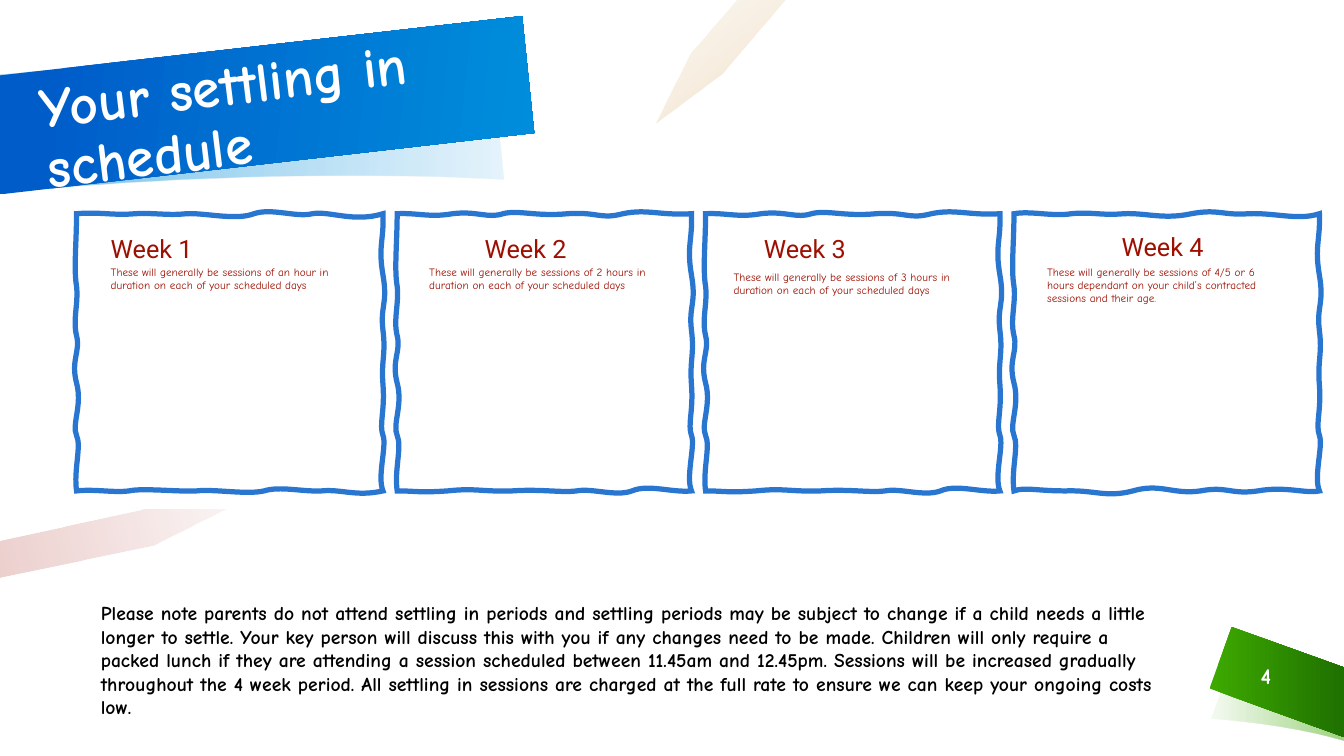
import pptx
import pptx.dml.color
import pptx.enum.text
import pptx.oxml
import pptx.oxml.ns
import pptx.util

PX = 9144  # one hundredth of an inch in EMU
COLORS = {
    "blue": "005CC9", "sky": "008EDC", "green": "3DA800", "dark_green": "1F7100",
    "ochre": "C07400", "red": "9D0F00", "white": "FFFFFF", "black": "000000",
}
FRAME_TOP = 212
FRAME_HEIGHT = 275

# Decorations: points are (x, y), curves are (control 1, control 2, end).
# Gradient stops are (percent, color, opacity).
DECORATIONS = [
    ([(1202, 713), (1202, 713, 1278, 718, 1333, 735), (1333, 668),
      (1272, 651, 1224, 652, 1224, 652)],
     [(3, "green", 6), (100, "green", 50)], 0),
    ([(1333, 662), (1222, 622), (1200, 683), (1333, 731)],
     [(3, "green", 100), (100, "dark_green", 100)], 0),
    ([(499, 178), (487, 63), (487, 63, 313, 45, -2, 75), (-2, 191),
      (286, 163, 499, 178, 499, 178)],
     [(0, "sky", 10), (88, "sky", 50)], 180),
    ([(-1, 193), (530, 132), (518, 16), (-1, 75)],
     [(9, "blue", 100), (100, "sky", 100)], 6),
    ([(779, 0), (731, 0), (685, 53), (650, 123), (716, 74)],
     [(0, "ochre", 5), (100, "ochre", 20)], 53),
    ([(224, 505), (142, 505), (0, 536), (0, 573), (153, 541)],
     [(0, "red", 5), (100, "red", 20)], 164),
]

# Frame edges: each curve is relative to the corner that its edge is measured from.
RIGHT_EDGE = [(1, 27, -5, 32, 0, 61), (5, 90, -3, 91, 0, 116), (3, 140, -2, 145, 0, 170),
              (2, 196, -4, 209, 0, 220), (4, 230, -6, 261, 0, 275)]
LEFT_EDGE = [(-3, 254, 5, 231, 0, 220), (-5, 209, 6, 190, 0, 168), (-6, 145, 4, 137, 0, 121),
             (-4, 105, 2, 89, 0, 72), (-3, 55, 0, 28, 0, 0)]
FIRST_EDGES = (
    [(23, -2, 37, 2, 58, 0), (78, -1, 91, 2, 109, 0), (128, -1, 158, 7, 176, 0),
     (194, -6, 218, 4, 234, 0), (251, -3, 275, 9, 304, 0)],
    [(277, 6, 263, -2, 243, 0), (224, 1, 202, -5, 186, 0), (169, 4, 137, -2, 119, 0),
     (100, 1, 66, -3, 52, 0), (37, 2, 18, -2, 0, 0)])
MIDDLE_EDGES = (
    [(21, -1, 32, 4, 55, 0), (79, -3, 90, 5, 105, 0), (120, -4, 138, 3, 169, 0),
     (200, -2, 201, 6, 224, 0), (248, -5, 261, 2, 292, 0)],
    [(273, 2, 249, -7, 233, 0), (217, 6, 193, -3, 178, 0), (163, 2, 143, -2, 114, 0),
     (84, 1, 78, -3, 50, 0), (21, 2, 19, 0, 0, 0)])
LAST_EDGES = (
    [(17, -3, 38, 3, 57, 0), (77, -2, 87, 2, 109, 0), (131, -1, 148, 6, 176, 0),
     (203, -5, 207, 2, 233, 0), (260, -1, 282, 7, 303, 0)],
    [(289, 3, 270, -5, 242, 0), (215, 4, 212, -5, 185, 0), (158, 4, 145, -8, 118, 0),
     (91, 7, 81, -1, 51, 0), (22, 0, 11, -4, 0, 0)])

SESSIONS = "These will generally be sessions of {} in duration on each of your scheduled days"
# Frame left, edges, heading, heading box, text, text box
WEEKS = [
    (76, FIRST_EDGES, "Week 1", (100, 227, 135, 40),
     SESSIONS.format("an hour"), (100, 258, 243, 37)),
    (394, MIDDLE_EDGES, "Week 2", (471, 227, 362, 40),
     SESSIONS.format("2 hours"), (416, 258, 243, 37)),
    (700, MIDDLE_EDGES, "Week 3", (748, 227, 162, 40),
     SESSIONS.format("3 hours"), (718, 263, 243, 37)),
    (1006, LAST_EDGES, "Week 4", (1103, 225, 154, 40),
     "These will generally be sessions of 4/5 or 6 hours dependant on your child’s "
     "contracted sessions and their age.", (1029, 258, 243, 50)),
]
NOTE = (
    "Please note parents do not attend settling in periods and settling periods may be "
    "subject to change if a child needs a little longer to settle. Your key person will "
    "discuss this with you if any changes need to be made. Children will only require a "
    "packed lunch if they are attending a session scheduled between 11.45am and 12.45pm. "
    "Sessions will be increased gradually throughout the 4 week period. All settling in "
    "sessions are charged at the full rate to ensure we can keep your ongoing costs low.")


def rgb(name):
    return pptx.dml.color.RGBColor.from_string(COLORS[name])


def drawing_element(tag, **attributes):
    element = pptx.oxml.parse_xml(f'<a:{tag} {pptx.oxml.ns.nsdecls("a")}/>')
    for name, value in attributes.items():
        element.set(name, str(value))
    return element


def find_all(shape, tag):
    return list(shape._element.iter(pptx.oxml.ns.qn(f"a:{tag}")))


def set_opacity(color_element, percent):
    color_element.append(drawing_element("alpha", val=percent * 1000))


def add_outline(slide, outline):
    """Draw a closed outline whose segments are end points or cubic curves."""
    ends = [(segment[-2] * PX, segment[-1] * PX) for segment in outline]
    builder = slide.shapes.build_freeform(*ends[0])
    builder.add_line_segments(ends[1:], close=True)
    shape = builder.convert_to_shape()
    shape.shadow.inherit = False

    origin_x = min(x for x, _ in ends)
    origin_y = min(y for _, y in ends)
    for line, segment in zip(find_all(shape, "lnTo"), outline[1:]):
        if len(segment) == 6:
            curve = drawing_element("cubicBezTo")
            for x, y in zip(segment[::2], segment[1::2]):
                curve.append(drawing_element("pt", x=x * PX - origin_x, y=y * PX - origin_y))
            line.getparent().replace(line, curve)
    return shape


def add_decoration(slide, outline, stops, angle):
    shape = add_outline(slide, outline)
    shape.line.fill.background()
    shape.fill.gradient()
    shape.fill.gradient_angle = -angle % 360
    for gradient_stop, (percent, color, _) in zip(shape.fill.gradient_stops, stops):
        gradient_stop.position = percent / 100
        gradient_stop.color.rgb = rgb(color)
    for element, (_, _, opacity) in zip(find_all(shape, "srgbClr"), stops):
        if opacity < 100:
            set_opacity(element, opacity)


def shift(curves, dx, dy):
    return [tuple(value + (dy if index % 2 else dx) for index, value in enumerate(curve))
            for curve in curves]


def add_wavy_frame(slide, left, edges):
    top_edge, bottom_edge = edges
    right = left + top_edge[-1][4]
    outline = ([(left, FRAME_TOP)]
               + shift(top_edge, left, FRAME_TOP)
               + shift(RIGHT_EDGE, right, FRAME_TOP)
               + shift(bottom_edge, left, FRAME_TOP + FRAME_HEIGHT)
               + shift(LEFT_EDGE, left, FRAME_TOP))
    shape = add_outline(slide, outline)
    shape.fill.background()
    shape.line.color.rgb = rgb("blue")
    shape.line.width = pptx.util.Pt(3.75)
    set_opacity(find_all(shape, "srgbClr")[0], 84)
    find_all(shape, "ln")[0].append(drawing_element("miter", lim=800000))


def write(text_frame, text, size, color, font="Comic Neue", bold=False):
    text_frame.word_wrap = True
    paragraph = text_frame.paragraphs[0]
    run = paragraph.add_run()
    run.text = text
    run.font.name = font
    run.font.size = pptx.util.Pt(size)
    run.font.bold = bold
    run.font.color.rgb = rgb(color)
    return paragraph


def add_text(slide, box, text, size, color, **style):
    shape = slide.shapes.add_textbox(*(value * PX for value in box))
    write(shape.text_frame, text, size, color, **style)
    return shape.text_frame


def place_title(slide, text):
    title = slide.shapes.title
    title.left, title.top, title.width, title.height = (
        value * PX for value in (32, 39, 480, 145))
    title.rotation = 353
    title.text_frame.auto_size = pptx.enum.text.MSO_AUTO_SIZE.NONE
    title.text_frame.vertical_anchor = pptx.enum.text.MSO_ANCHOR.MIDDLE
    paragraph = write(title.text_frame, text, 40, "white", bold=True)
    paragraph.alignment = pptx.enum.text.PP_ALIGN.LEFT
    paragraph.line_spacing = 0.9
    slide.shapes._spTree.append(title._element)  # in front of the banner


def main():
    presentation = pptx.Presentation()
    presentation.slide_width = pptx.util.Inches(40 / 3)
    presentation.slide_height = 750 * PX
    slide = presentation.slides.add_slide(presentation.slide_layouts[5])

    for outline, stops, angle in DECORATIONS:
        add_decoration(slide, outline, stops, angle)

    note = add_text(slide, (100, 592, 1062, 125), NOTE, 14, "black", bold=True)
    note.margin_left = 0
    note.vertical_anchor = pptx.enum.text.MSO_ANCHOR.MIDDLE
    number = add_text(slide, (1221, 650, 70, 40), "4", 16, "white", bold=True)
    number.vertical_anchor = pptx.enum.text.MSO_ANCHOR.MIDDLE
    number.paragraphs[0].alignment = pptx.enum.text.PP_ALIGN.CENTER
    place_title(slide, "Your settling in schedule")

    for left, edges, heading, heading_box, text, text_box in WEEKS:
        add_wavy_frame(slide, left, edges)
        for content, box, size, font in ((heading, heading_box, 18, "Roboto"),
                                         (text, text_box, 8, "Comic Neue")):
            text_frame = add_text(slide, box, content, size, "red", font=font)
            text_frame.auto_size = pptx.enum.text.MSO_AUTO_SIZE.SHAPE_TO_FIT_TEXT

    presentation.save("out.pptx")


if __name__ == "__main__":
    main()
